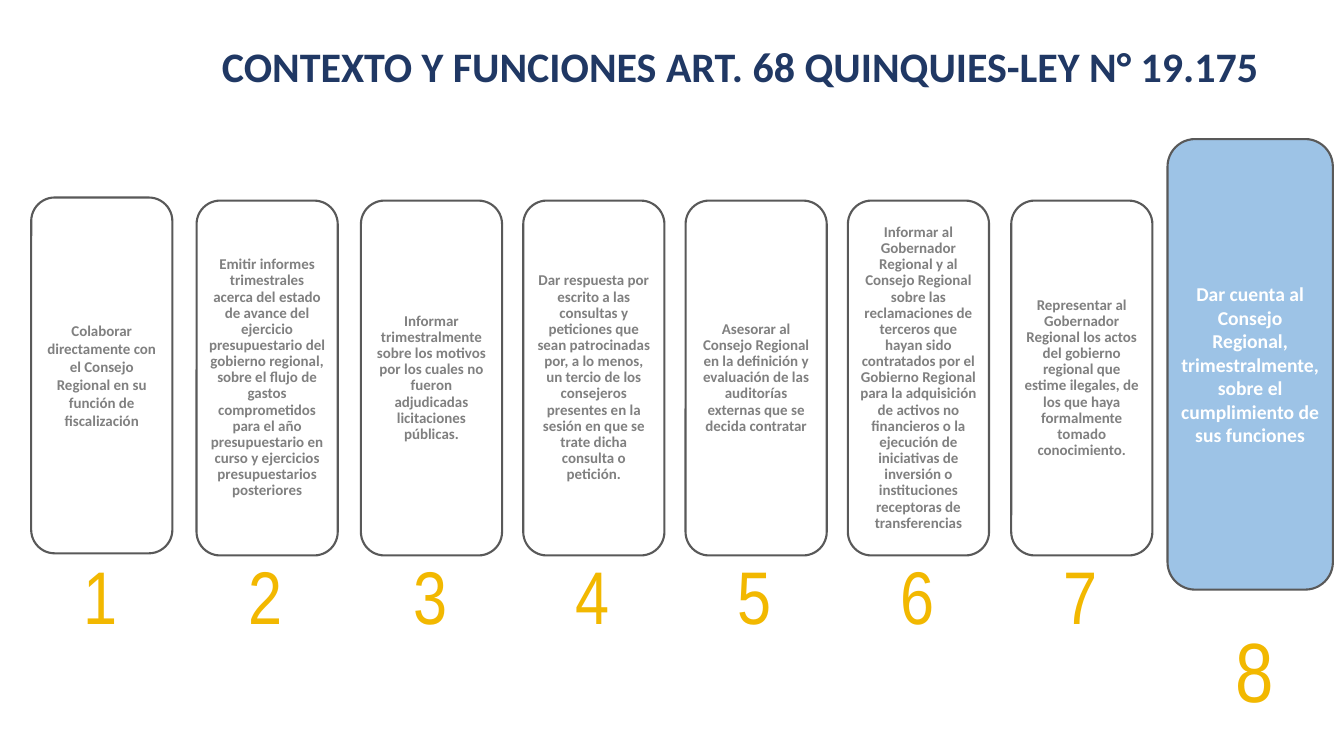
from pptx import Presentation
from pptx.dml.color import RGBColor
from pptx.enum import shapes, text
from pptx.util import Inches, Pt

WHITE = RGBColor(0xFF, 0xFF, 0xFF)
GREY = RGBColor(0x80, 0x80, 0x80)
OUTLINE = RGBColor(0x59, 0x59, 0x59)
SKY = RGBColor(0x9D, 0xC3, 0xE6)
NAVY = RGBColor(0x20, 0x38, 0x64)
GOLD = RGBColor(0xF2, 0xB8, 0x00)

# Left edge, top, height, line spacing and wording of each plain card
FUNCTIONS = [
    (0.31, 1.96, 3.53, 1.0, "Colaborar directamente con el Consejo Regional en su función "
     "de fiscalización"),
    (1.95, 1.99, 3.52, 0.9, "Emitir informes trimestrales acerca del estado de avance del "
     "ejercicio presupuestario del gobierno regional, sobre el flujo de gastos "
     "comprometidos para el año presupuestario en curso y ejercicios "
     "presupuestarios posteriores"),
    (3.58, 1.99, 3.52, 0.9, "Informar trimestralmente sobre los motivos por los cuales no "
     "fueron adjudicadas licitaciones públicas."),
    (5.19, 1.99, 3.52, 0.9, "Dar respuesta por escrito a las consultas y peticiones que "
     "sean patrocinadas por, a lo menos, un tercio de los consejeros presentes en "
     "la sesión en que se trate dicha consulta o petición."),
    (6.8, 1.99, 3.52, 0.9, "Asesorar al Consejo Regional en la definición y evaluación de "
     "las auditorías externas que se decida contratar"),
    (8.41, 1.99, 3.52, 0.9, "Informar al Gobernador Regional y al Consejo Regional sobre "
     "las reclamaciones de terceros que hayan sido contratados por el Gobierno "
     "Regional para la adquisición de activos no financieros o la ejecución de "
     "iniciativas de inversión o instituciones receptoras de transferencias"),
    (10.03, 1.99, 3.52, 0.9, "Representar al Gobernador Regional los actos del gobierno "
     "regional que estime ilegales, de los que haya formalmente tomado "
     "conocimiento."),
]
LAST_FUNCTION = ("Dar cuenta al Consejo Regional, trimestralmente, sobre el "
                 "cumplimiento de sus funciones")


def write(box, wording, size, color, font="Calibri", bold=True,
          align=text.PP_ALIGN.CENTER, spacing=1.0):
    frame = box.text_frame
    frame.word_wrap = True
    para = frame.paragraphs[0]
    para.alignment = align
    para.line_spacing = spacing
    span = para.add_run()
    span.text = wording
    span.font.name = font
    span.font.size = Pt(size)
    span.font.bold = bold
    span.font.color.rgb = color


def add_title(page, left, top, width, height):
    box = page.shapes.add_textbox(Inches(left), Inches(top), Inches(width), Inches(height))
    write(box, "CONTEXTO Y FUNCIONES ART. 68 QUINQUIES-LEY N° 19.175", 30, NAVY,
          spacing=1.07)


def add_card(page, left, top, width, height, wording, fill=WHITE, color=GREY,
             size=10.7, spacing=1.0):
    card = page.shapes.add_shape(shapes.MSO_SHAPE.ROUNDED_RECTANGLE, Inches(left),
                                 Inches(top), Inches(width), Inches(height))
    card.shadow.inherit = False
    card.fill.solid()
    card.fill.fore_color.rgb = fill
    card.line.color.rgb = OUTLINE
    card.line.width = Pt(1.5)
    frame = card.text_frame
    frame.vertical_anchor = text.MSO_ANCHOR.MIDDLE
    frame.margin_left = frame.margin_right = Inches(0.05)
    frame.margin_top = frame.margin_bottom = Inches(0.05)
    write(card, wording, size, color, spacing=spacing)


def add_number(page, left, top, width, height, number, size=53.3):
    box = page.shapes.add_textbox(Inches(left), Inches(top), Inches(width), Inches(height))
    write(box, str(number), size, GOLD, font="Arial Narrow", bold=False,
          align=text.PP_ALIGN.LEFT)


def add_functions(page):
    # Plain cards, each with its number below
    for number, (left, top, height, spacing, wording) in enumerate(FUNCTIONS, 1):
        add_card(page, left, top, 1.4, height, wording, spacing=spacing)
        add_number(page, left + 0.42, 5.41, 0.49, 0.99, number)

    # Highlighted last card
    left, top = 11.58, 1.38
    add_card(page, left, top, 1.64, 4.47, LAST_FUNCTION, fill=SKY, color=WHITE, size=14)
    add_number(page, left + 0.58, top + 4.71, 0.55, 1.11, len(FUNCTIONS) + 1, size=60)


def main():
    deck = Presentation()
    deck.slide_width = Inches(13.33)
    deck.slide_height = Inches(7.5)
    page = deck.slides.add_slide(deck.slide_layouts[6])
    add_functions(page)
    add_title(page, 1.6, 0.32, 11.49, 0.6)
    deck.save("out.pptx")


if __name__ == "__main__":
    main()
